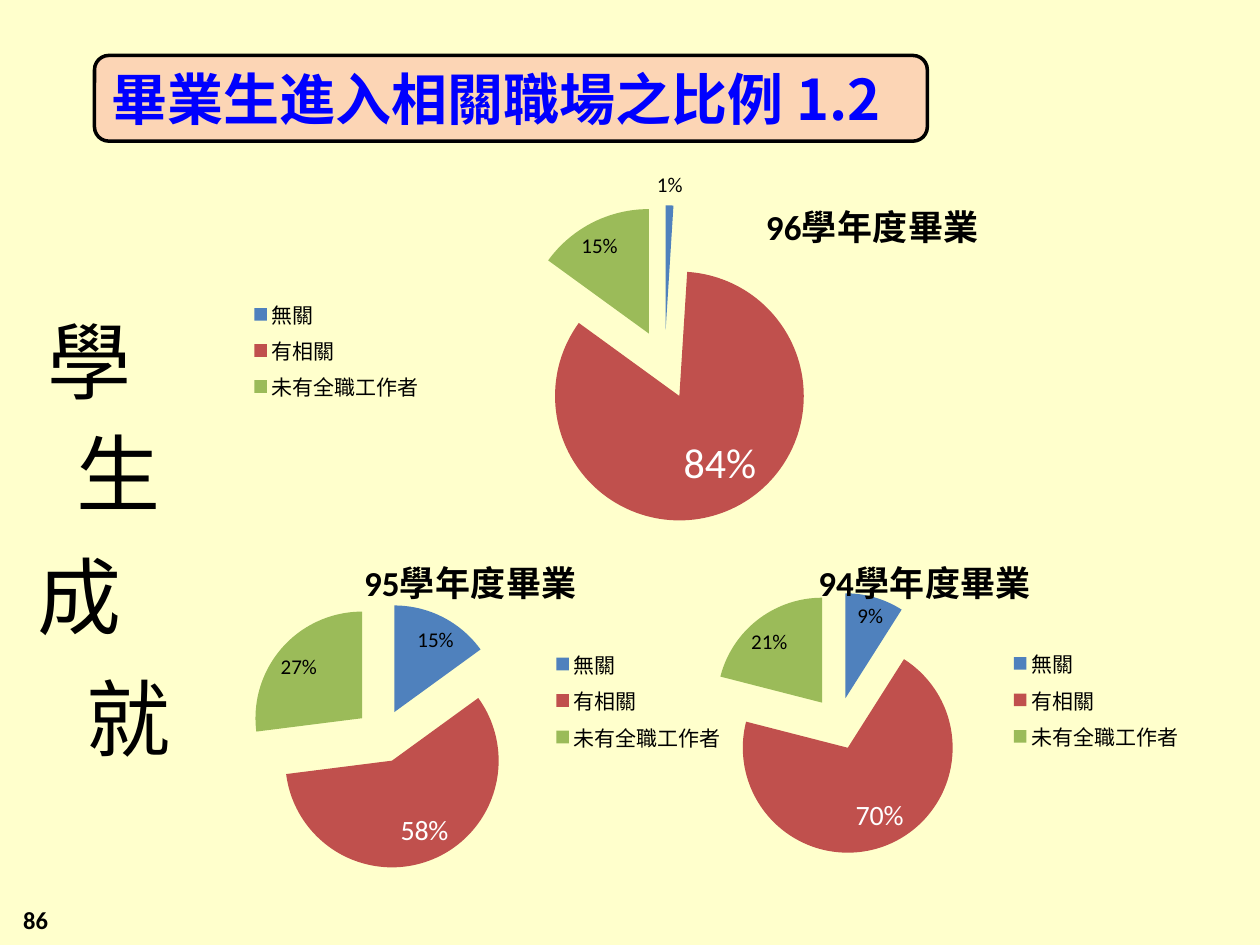
"""Build the slide on the share of graduates entering related jobs."""
from lxml.etree import SubElement
from pptx import Presentation
from pptx.chart.data import CategoryChartData
from pptx.dml.color import RGBColor
from pptx.enum.chart import XL_CHART_TYPE, XL_LABEL_POSITION, XL_LEGEND_POSITION
from pptx.enum.shapes import MSO_SHAPE
from pptx.enum.text import MSO_ANCHOR, PP_ALIGN
from pptx.oxml import parse_xml
from pptx.oxml.ns import nsdecls, qn
from pptx.util import Inches, Pt

COLORS = {
    "background": "FFFFCC", "banner": "FCD5B5", "heading": "0000FF",
    "ink": "000000", "white": "FFFFFF",
    "無關": "4F81BD", "有相關": "C0504D", "未有全職工作者": "9BBB59",
}
CATEGORIES = ["無關", "有相關", "未有全職工作者"]
HEADING = "畢業生進入相關職場之比例 1.2"
PAGE_NUMBER = "86"
THEME = [("學", 0.28, 2.41), ("生", 0.51, 3.3), ("成", 0.2, 4.27), ("就", 0.59, 5.24)]
YEARS = [
    {"title": "94學年度畢業", "values": (9, 70, 21), "at": (5.19, 4.22, 4.3, 2.67),
     "plot": (0.02, 0.18, 0.64, 0.78), "explosion": 25, "main_size": 16},
    {"title": "95學年度畢業", "values": (15, 58, 27), "at": (1.61, 4.22, 4.25, 2.68),
     "plot": (0.01, 0.21, 0.65, 0.79), "explosion": 25, "main_size": 16},
    {"title": "96學年度畢業", "values": (1, 84, 15), "at": (1.85, 1.31, 6.85, 3.2),
     "plot": (0, 0.1, 1, 0.79), "explosion": 28, "main_size": 24,
     "title_at": (0.61, 0.06), "legend_at": (0, 0.32, 0.24, 0.28)},
]


def color(name):
    return RGBColor.from_string(COLORS[name])


def style(font, size, ink="ink", bold=False, name="Calibri"):
    font.size, font.bold, font.name = Pt(size), bold, name
    font.color.rgb = color(ink)


def style_text(frame, text, size, ink="ink", bold=False, name="Calibri"):
    frame.text = text
    run = frame.paragraphs[0].runs[0]
    style(run.font, size, ink, bold, name)
    east_asian = "Noto Sans CJK SC" if name == "Calibri" else name
    SubElement(run.font._element, qn("a:ea")).set("typeface", east_asian)


def add_text(shapes, box, text, size, **look):
    textbox = shapes.add_textbox(*map(Inches, box))
    textbox.text_frame.word_wrap = True
    style_text(textbox.text_frame, text, size, **look)
    return textbox.text_frame


def set_layout(parent, index, box, inner=False):
    for old in parent.findall(qn("c:layout")):
        parent.remove(old)
    layout = parse_xml(f"<c:layout {nsdecls('c')}><c:manualLayout/></c:layout>")
    settings = [("layoutTarget", "inner")] if inner else []
    settings += [("xMode", "edge"), ("yMode", "edge"), *zip("xywh", box)]
    for tag, value in settings:
        SubElement(layout[0], qn(f"c:{tag}")).set("val", str(value))
    parent.insert(index, layout)


def add_year(slide, year):
    data = CategoryChartData()
    data.categories = CATEGORIES
    data.add_series("Series 1", year["values"])
    chart = slide.shapes.add_chart(XL_CHART_TYPE.PIE, *map(Inches, year["at"]), data).chart
    style(chart.font, 12)

    style_text(chart.chart_title.text_frame, year["title"], 20, bold=True)
    chart.chart_title.include_in_layout = False
    chart.has_legend = True
    chart.legend.position = XL_LEGEND_POSITION.RIGHT
    chart.legend.include_in_layout = False
    style(chart.legend.font, 12)
    set_layout(chart._chartSpace.chart.plotArea, 0, year["plot"], inner=True)
    if "title_at" in year:
        set_layout(chart.chart_title._element, 1, year["title_at"])
        set_layout(chart.legend._element, 1, year["legend_at"])

    pie = chart.plots[0]
    pie.vary_by_categories = True
    series = pie.series[0]
    explosion = parse_xml(f'<c:explosion {nsdecls("c")} val="{year["explosion"]}"/>')
    series._element.find(qn("c:tx")).addnext(explosion)
    for index, category in enumerate(CATEGORIES):
        fill = series.points[index].format.fill
        fill.solid()
        fill.fore_color.rgb = color(category)

    labels = series.data_labels
    labels.show_percentage, labels.show_value = True, False
    labels.number_format, labels.number_format_is_linked = "0%", False
    labels.position = XL_LABEL_POSITION.BEST_FIT
    style(labels.font, 12)
    main_label = series.points[1].data_label
    style(main_label.font, year["main_size"], "white")
    main_label.position = XL_LABEL_POSITION.BEST_FIT
    main_element = labels._element.find(qn("c:dLbl"))
    main_element.find(qn("c:showVal")).set("val", "0")
    main_element.find(qn("c:showPercent")).set("val", "1")


def main():
    deck = Presentation()
    deck.slide_width, deck.slide_height = Inches(10), Inches(7.5)
    slide = deck.slides.add_slide(deck.slide_layouts[6])
    slide.background.fill.solid()
    slide.background.fill.fore_color.rgb = color("background")

    banner = slide.shapes.add_shape(
        MSO_SHAPE.ROUNDED_RECTANGLE, *map(Inches, (0.75, 0.44, 6.61, 0.68)))
    banner.shadow.inherit = False
    banner.fill.solid()
    banner.fill.fore_color.rgb = color("banner")
    banner.line.color.rgb = color("ink")
    banner.line.width = Pt(2)
    banner.text_frame.word_wrap = False
    banner.text_frame.vertical_anchor = MSO_ANCHOR.MIDDLE
    style_text(banner.text_frame, HEADING, 32, "heading", True, "Noto Sans CJK SC")
    banner.text_frame.paragraphs[0].alignment = PP_ALIGN.LEFT

    for year in YEARS:
        add_year(slide, year)

    page = add_text(slide.shapes, (0, 7.1, 0.48, 0.4), PAGE_NUMBER, 14, bold=True)
    page.vertical_anchor = MSO_ANCHOR.MIDDLE
    page.paragraphs[0].alignment = PP_ALIGN.RIGHT

    theme = slide.shapes.add_group_shape()
    for character, left, top in THEME:
        add_text(theme.shapes, (left, top, 1.02, 0.93), character, 48,
                 name="Noto Sans CJK JP")

    deck.save("out.pptx")


if __name__ == "__main__":
    main()
